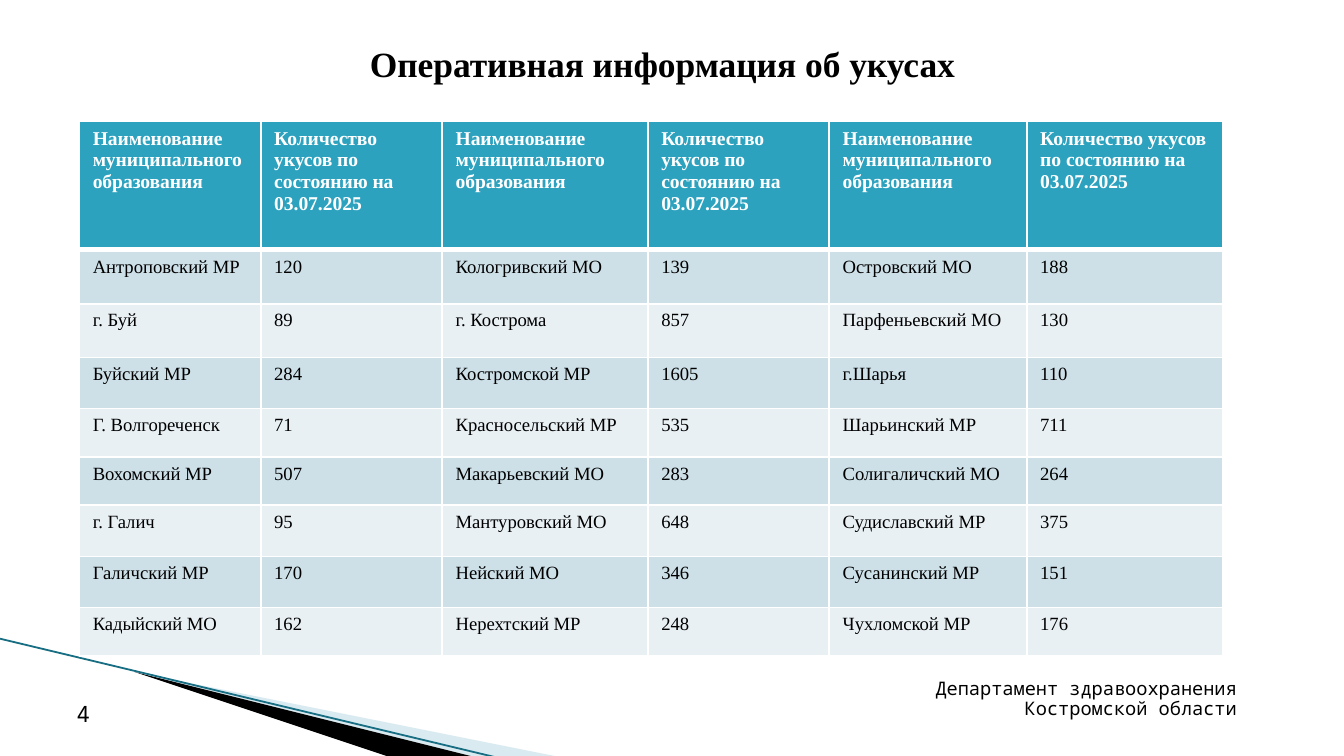
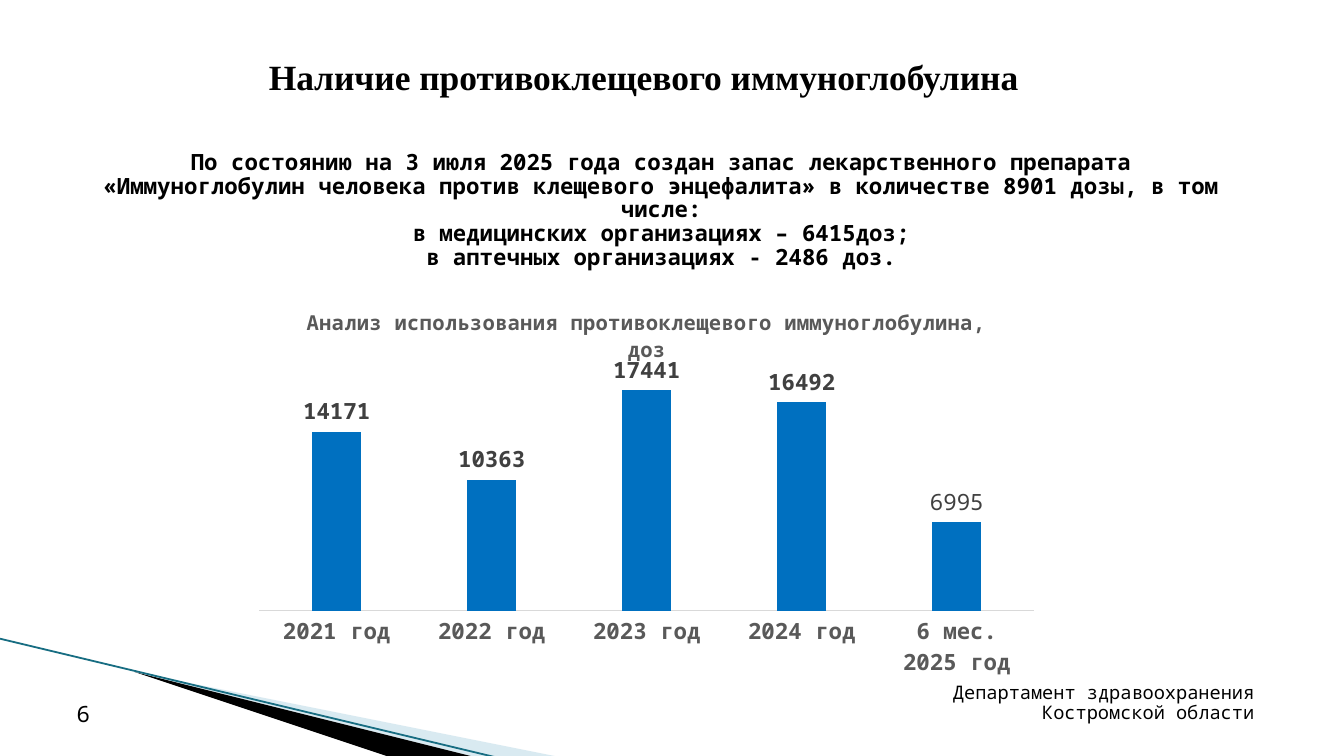
"""Builds two slides on tick bites and immunoglobulin stocks."""
from lxml.etree import SubElement
from pptx import Presentation
from pptx.chart.data import CategoryChartData
from pptx.dml.color import RGBColor
from pptx.enum.chart import XL_CHART_TYPE, XL_LABEL_POSITION, XL_TICK_MARK
from pptx.enum.shapes import MSO_CONNECTOR
from pptx.enum.text import MSO_ANCHOR, PP_ALIGN
from pptx.oxml import parse_xml
from pptx.oxml.ns import nsdecls, qn
from pptx.util import Inches, Pt

WIDTH, HEIGHT = 10, 5.625
SERIF, MONO = "Times New Roman", "Noto Sans Mono"
COLORS = {
    "text": "000000", "white": "FFFFFF", "header": "2DA2BF",
    "band_dark": "CDE0E8", "band_light": "E8F0F4",
    "wedge": "A0CBDC", "edge": "176D82", "bar": "0070C0",
    "chart_text": "595959", "label": "404040", "axis": "D9D9D9",
}
FOOTER = "Департамент здравоохранения Костромской области"
WEDGES = [
    ([(0.55, 4.88), (5.95, 5.63), (4.56, 5.63)], "wedge", 40),
    ([(0.53, 4.87), (4.57, 5.63), (3.72, 5.64), (0.54, 4.88)], "text", 100),
]
EDGE = (-0.01, 4.75, 3.71, 5.64)

BITES_TITLE = "Оперативная информация об укусах"
BITES_HEADER = [
    "Наименование муниципального образования",
    "Количество укусов по состоянию на 03.07.2025",
] * 3
BITES = [
    ("Антроповский МР", 120, "Кологривский МО", 139, "Островский МО", 188),
    ("г. Буй", 89, "г. Кострома", 857, "Парфеньевский МО", 130),
    ("Буйский МР", 284, "Костромской МР", 1605, "г.Шарья", 110),
    ("Г. Волгореченск", 71, "Красносельский МР", 535, "Шарьинский МР", 711),
    ("Вохомский МР", 507, "Макарьевский МО", 283, "Солигаличский МО", 264),
    ("г. Галич", 95, "Мантуровский МО", 648, "Судиславский МР", 375),
    ("Галичский МР", 170, "Нейский МО", 346, "Сусанинский МР", 151),
    ("Кадыйский МО", 162, "Нерехтский МР", 248, "Чухломской МР", 176),
]
COLUMN_WIDTHS = [1.35, 1.35, 1.53, 1.35, 1.47, 1.46]
ROW_HEIGHTS = [0.96, 0.4, 0.4, 0.38, 0.36, 0.36, 0.38, 0.38, 0.36]

STOCK_TITLE = "Наличие противоклещевого иммуноглобулина"
STOCK_TEXT = [
    "По состоянию на 3 июля 2025 года создан запас лекарственного препарата "
    "«Иммуноглобулин человека против клещевого энцефалита» "
    "в количестве 8901 дозы, в том числе:",
    "в медицинских организациях – 6415доз;",
    "в аптечных организациях - 2486 доз.",
]
USAGE_TITLE = "Анализ использования противоклещевого иммуноглобулина, доз"
USAGE = {"2021 год": 14171, "2022 год": 10363, "2023 год": 17441,
         "2024 год": 16492, "6 мес. 2025 год": 6995}


def color(name):
    """Return a palette colour."""
    return RGBColor.from_string(COLORS[name])


def set_font(font, size, name=MONO, tint="text", bold=False):
    """Set all the properties of a font."""
    font.size, font.name, font.bold = Pt(size), name, bold
    font.color.rgb = color(tint)


def add_text(slide, box, lines, size, align=PP_ALIGN.CENTER,
             anchor=MSO_ANCHOR.BOTTOM, name=MONO, bold=False, spacing=0.88):
    """Add a wrapped text box with one paragraph for each line."""
    frame = slide.shapes.add_textbox(*map(Inches, box)).text_frame
    frame.word_wrap, frame.vertical_anchor = True, anchor
    frame.text = "\n".join(lines)
    for paragraph in frame.paragraphs:
        paragraph.alignment, paragraph.line_spacing = align, spacing
        set_font(paragraph.font, size, name, bold=bold)


def add_base_slide(presentation, title, title_box, number, footer_place):
    """Add a slide with the corner wedges, title, footer and number."""
    slide = presentation.slides.add_slide(presentation.slide_layouts[6])
    for points, tint, opacity in WEDGES:
        builder = slide.shapes.build_freeform(*points[0], scale=Inches(1))
        builder.add_line_segments(points[1:], close=True)
        wedge = builder.convert_to_shape()
        wedge.shadow.inherit = False
        wedge.fill.solid()
        wedge.fill.fore_color.rgb = color(tint)
        wedge.line.fill.background()
        if opacity < 100:
            tone = wedge.fill._xPr.find(".//" + qn("a:srgbClr"))
            SubElement(tone, qn("a:alpha"), val=str(opacity * 1000))
    edge = slide.shapes.add_connector(MSO_CONNECTOR.STRAIGHT, *map(Inches, EDGE))
    edge.line.color.rgb, edge.line.width = color("edge"), Pt(0.95)
    SubElement(edge._element.spPr, qn("a:effectLst"))
    add_text(slide, title_box, [title], 19, anchor=MSO_ANCHOR.MIDDLE,
             name=SERIF, bold=True, spacing=1)
    add_text(slide, (*footer_place, 2.57, 0.3), [FOOTER], 10, PP_ALIGN.RIGHT)
    add_text(slide, (0.23, 5.16, 0.78, 0.3), [str(number)], 12)
    return slide


def set_borders(cell, top, bottom):
    """Draw white borders around a cell."""
    widths = {"lnL": 1, "lnR": 1, "lnT": top, "lnB": bottom}
    for place, (tag, width) in enumerate(widths.items()):
        cell._tc.get_or_add_tcPr().insert(place, parse_xml(
            f'<a:{tag} {nsdecls("a")} w="{Pt(width)}"><a:solidFill>'
            f'<a:srgbClr val="{COLORS["white"]}"/></a:solidFill></a:{tag}>'))


def add_bites_table(slide):
    """Add the banded table of bites by municipality."""
    rows = [BITES_HEADER, *BITES]
    table = slide.shapes.add_table(
        len(rows), len(COLUMN_WIDTHS), Inches(0.59), Inches(0.9),
        Inches(sum(COLUMN_WIDTHS)), Inches(sum(ROW_HEIGHTS))).table
    for column, width in zip(table.columns, COLUMN_WIDTHS):
        column.width = Inches(width)
    for row, height in zip(table.rows, ROW_HEIGHTS):
        row.height = Inches(height)
    for row_index, values in enumerate(rows):
        header = row_index == 0
        band = "header" if header else ("band_light", "band_dark")[row_index % 2]
        for column_index, value in enumerate(values):
            cell = table.cell(row_index, column_index)
            cell.text = str(value)
            cell.fill.solid()
            cell.fill.fore_color.rgb = color(band)
            set_font(cell.text_frame.paragraphs[0].font, 10.5 if header else 10,
                     SERIF, "white" if header else "text", header)
            set_borders(cell, 3 if row_index == 1 else 1, 3 if header else 1)


def layout_xml(target=None, **shares):
    """Return a manual chart layout given as shares of the chart."""
    inner = f'<c:layoutTarget val="{target}"/>' if target else ""
    modes = "".join(f'<c:{axis}Mode val="edge"/>' for axis in "xy")
    sizes = "".join(f'<c:{key} val="{value}"/>' for key, value in shares.items())
    return parse_xml(f'<c:layout {nsdecls("c")}><c:manualLayout>'
                     f'{inner}{modes}{sizes}</c:manualLayout></c:layout>')


def place(element, layout, index):
    """Replace the layout of a chart element."""
    for old in element.findall(qn("c:layout")):
        element.remove(old)
    element.insert(index, layout)


def add_usage_chart(slide):
    """Add the column chart of doses used by year."""
    data = CategoryChartData()
    data.categories = list(USAGE)
    data.add_series("Series 1", list(USAGE.values()))
    chart = slide.shapes.add_chart(
        XL_CHART_TYPE.COLUMN_CLUSTERED,
        *map(Inches, (1.67, 1.79, 6.48, 3.25)), data).chart
    set_font(chart.font, 10)
    chart.has_legend = False
    chart.has_title = True
    title = chart.chart_title
    title.text_frame.text = USAGE_TITLE
    set_font(title.text_frame.paragraphs[0].font, 11, tint="chart_text", bold=True)
    title.include_in_layout = False
    place(title._element, layout_xml(x=0.09, y=0.14), 1)
    place(chart._chartSpace.chart.plotArea,
          layout_xml("inner", x=0.04, y=0.27, w=0.89, h=0.58), 0)

    values = chart.value_axis
    values.visible = values.has_major_gridlines = False
    values.minimum_scale, values.maximum_scale = 0, 20000
    categories = chart.category_axis
    categories.major_tick_mark = XL_TICK_MARK.NONE
    categories.format.line.color.rgb = color("axis")
    categories.format.line.width = Pt(0.75)
    set_font(categories.tick_labels.font, 12, tint="chart_text", bold=True)

    plot = chart.plots[0]
    plot.gap_width, plot.overlap, plot.vary_by_categories = 219, -27, False
    series = plot.series[0]
    series.format.fill.solid()
    series.format.fill.fore_color.rgb = color("bar")
    labels = series.data_labels
    labels.show_value = True
    last_label = series.points[len(USAGE) - 1].data_label
    for label, bold in ((labels, True), (last_label, False)):
        set_font(label.font, 12, tint="label", bold=bold)
        label.position = XL_LABEL_POSITION.OUTSIDE_END


def main():
    """Build and save the presentation."""
    presentation = Presentation()
    presentation.slide_width = Inches(WIDTH)
    presentation.slide_height = Inches(HEIGHT)
    bites = add_base_slide(presentation, BITES_TITLE, (0.43, 0, 9, 0.94),
                           4, (6.73, 5.1))
    add_bites_table(bites)
    stock = add_base_slide(presentation, STOCK_TITLE, (0.29, 0.21, 9, 0.72),
                           6, (6.86, 5.13))
    add_text(stock, (0.55, 1.08, 8.74, 0.91), STOCK_TEXT, 12,
             anchor=MSO_ANCHOR.TOP, bold=True)
    add_usage_chart(stock)
    presentation.save("out.pptx")


if __name__ == "__main__":
    main()
